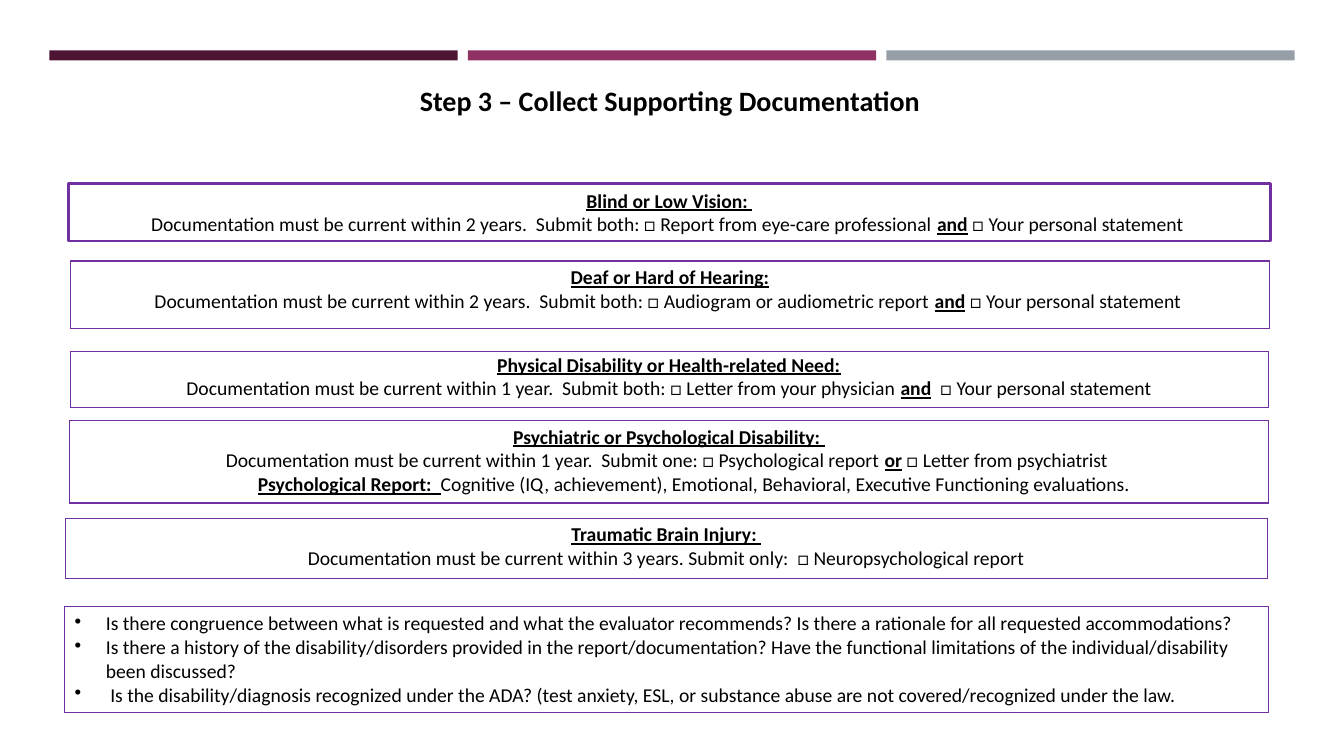
from dataclasses import dataclass

from lxml.etree import SubElement
from pptx import Presentation
from pptx.dml.color import RGBColor
from pptx.enum.shapes import MSO_SHAPE
from pptx.enum.text import MSO_ANCHOR, MSO_AUTO_SIZE, PP_ALIGN
from pptx.oxml.ns import qn
from pptx.slide import Slide
from pptx.text.text import TextFrame
from pptx.util import Emu, Pt

PX = 9144  # 100 px to the inch
FONT = "Calibri"
BLACK = RGBColor(0x00, 0x00, 0x00)
WHITE = RGBColor(0xFF, 0xFF, 0xFF)
PURPLE = RGBColor(0x70, 0x30, 0xA0)
PLUM = RGBColor(0x4D, 0x14, 0x34)
BERRY = RGBColor(0x90, 0x31, 0x63)
GREY = RGBColor(0x96, 0x9F, 0xA7)


@dataclass(frozen=True)
class Box:
    left: int
    top: int
    width: int
    height: int

    def emu(self) -> tuple[Emu, Emu, Emu, Emu]:
        return (Emu(self.left * PX), Emu(self.top * PX),
                Emu(self.width * PX), Emu(self.height * PX))


@dataclass(frozen=True)
class Line:
    """Text whose parts between asterisks are bold and underlined."""
    text: str
    margin: int = 0
    hanging: int = 0
    bullet: str = ""


@dataclass(frozen=True)
class FramedText:
    box: Box
    lines: tuple[Line, ...] = ()
    align: PP_ALIGN = PP_ALIGN.CENTER


BAR_COLOURS = (PLUM, BERRY, GREY)
BAR = Box(49, 50, 405, 10)
BAR_STEP = 415

TITLE_BOX = Box(69, 78, 1191, 44)
VISION_BOX = Box(68, 182, 1192, 57)
VISION = (
    Line("*Blind or Low Vision: *"),
    Line("Documentation must be current within 2 years.  Submit both: "
         "□ Report from eye-care professional *and* □ Your personal statement "),
)
PHYSICAL_BOX = Box(67, 345, 1193, 57)
PHYSICAL = (
    Line("*Physical Disability or Health-related Need:*"),
    Line("Documentation must be current within 1 year.  Submit both: "
         "□ Letter from your physician *and*  □ Your personal statement"),
)
QUESTIONS = (
    "Is there congruence between what is requested and what the evaluator recommends? "
    "Is there a rationale for all requested accommodations?",
    "Is there a history of the disability/disorders provided in the report/documentation? "
    "Have the functional limitations of the individual/disability been discussed?",
    " Is the disability/diagnosis recognized under the ADA? "
    "(test anxiety, ESL, or substance abuse are not covered/recognized under the law.",
)
TABLES = (
    FramedText(Box(70, 259, 1189, 67), (
        Line("*Deaf or Hard of Hearing:*"),
        Line("Documentation must be current within 2 years.  Submit both: "
             "□ Audiogram or audiometric report *and* □ Your personal statement "),
    )),
    FramedText(Box(70, 349, 1188, 55)),
    FramedText(Box(69, 417, 1189, 82), (
        Line("*Psychiatric or Psychological Disability: *"),
        Line("Documentation must be current within 1 year.  Submit one: "
             "□ Psychological report *or* □ Letter from psychiatrist "),
        Line("*Psychological Report:  *Cognitive (IQ, achievement), Emotional, "
             "Behavioral, Executive Functioning evaluations.", margin=50),
    )),
    FramedText(Box(65, 514, 1192, 60), (
        Line("*Traumatic Brain Injury: *"),
        Line("Documentation must be current within 3 years. Submit only:  "
             "□ Neuropsychological report"),
    )),
    FramedText(Box(64, 602, 1194, 103),
               tuple(Line(text, 31, 31, "•") for text in QUESTIONS), PP_ALIGN.LEFT),
)


def write_lines(frame: TextFrame, lines: tuple[Line, ...], *, size: int = 14,
                align: PP_ALIGN = PP_ALIGN.CENTER, bold: bool = False) -> None:
    frame.word_wrap = True
    for index, line in enumerate(lines):
        para = frame.add_paragraph() if index else frame.paragraphs[0]
        para.alignment = align
        para.space_before = Pt(0)
        properties = para._p.get_or_add_pPr()
        properties.set("marL", str(line.margin * PX))
        properties.set("indent", str(-line.hanging * PX))
        if line.bullet:
            SubElement(properties, qn("a:buChar")).set("char", line.bullet)
        else:
            SubElement(properties, qn("a:buNone"))
        for part, text in enumerate(line.text.split("*")):
            if not text:
                continue
            strong = part % 2 == 1
            span = para.add_run()
            span.text = text
            span.font.name = FONT
            span.font.size = Pt(size)
            span.font.color.rgb = BLACK
            span.font.bold = bold or strong
            span.font.underline = strong


def place(shape, box: Box) -> None:
    shape.left, shape.top, shape.width, shape.height = box.emu()


def add_bars(page: Slide) -> None:
    for index, colour in enumerate(BAR_COLOURS):
        box = Box(BAR.left + index * BAR_STEP, BAR.top, BAR.width, BAR.height)
        bar = page.shapes.add_shape(MSO_SHAPE.RECTANGLE, *box.emu())
        bar.shadow.inherit = False
        bar.fill.solid()
        bar.fill.fore_color.rgb = colour
        bar.line.fill.background()


def add_framed_table(page: Slide, framed: FramedText) -> None:
    """Add a one-cell table with a thin purple border."""
    table = page.shapes.add_table(1, 1, *framed.box.emu()).table
    table.first_row = False
    table.horz_banding = False
    cell = table.cell(0, 0)
    properties = cell._tc.get_or_add_tcPr()
    for side in ("a:lnL", "a:lnR", "a:lnT", "a:lnB"):
        border = SubElement(properties, qn(side), w=str(Pt(1)))
        fill = SubElement(border, qn("a:solidFill"))
        SubElement(fill, qn("a:srgbClr")).set("val", str(PURPLE))
    cell.fill.background()
    write_lines(cell.text_frame, framed.lines, align=framed.align)


def build_page(page: Slide) -> None:
    add_bars(page)

    title = page.shapes.title
    place(title, TITLE_BOX)
    title.text_frame.auto_size = MSO_AUTO_SIZE.NONE
    title.text_frame.vertical_anchor = MSO_ANCHOR.MIDDLE
    write_lines(title.text_frame, (Line("Step 3 – Collect Supporting Documentation"),),
                size=20, bold=True)

    vision = page.placeholders[1]
    place(vision, VISION_BOX)
    vision.fill.solid()
    vision.fill.fore_color.rgb = WHITE
    vision.line.color.rgb = PURPLE
    vision.line.width = Pt(1.75)
    vision.text_frame.auto_size = MSO_AUTO_SIZE.NONE
    vision.text_frame.vertical_anchor = MSO_ANCHOR.MIDDLE
    write_lines(vision.text_frame, VISION)

    for framed in TABLES:
        add_framed_table(page, framed)
    physical = page.shapes.add_textbox(*PHYSICAL_BOX.emu())
    write_lines(physical.text_frame, PHYSICAL)


def main() -> None:
    deck = Presentation()
    deck.slide_width = Emu(1333 * PX)
    deck.slide_height = Emu(750 * PX)
    build_page(deck.slides.add_slide(deck.slide_layouts[1]))
    deck.save("out.pptx")


if __name__ == "__main__":
    main()
